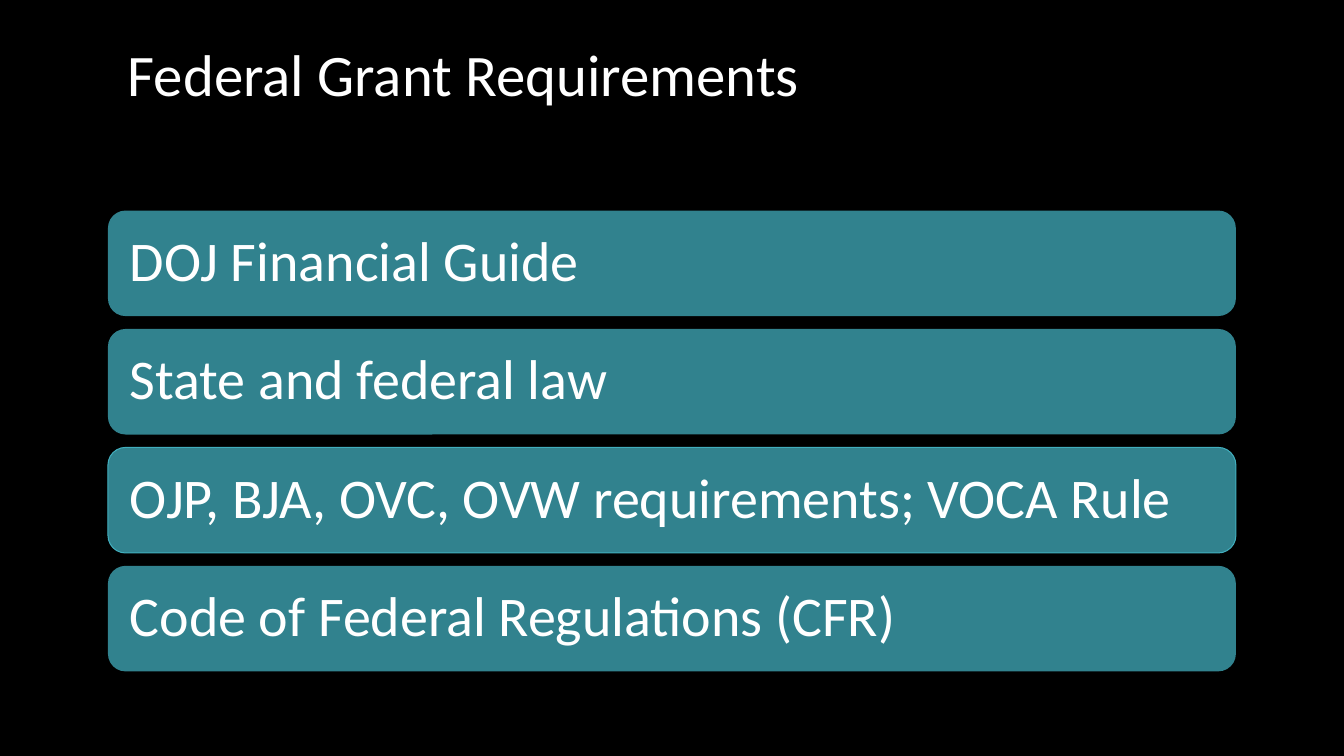
from pptx import Presentation
from pptx.dml.color import RGBColor
from pptx.enum.shapes import MSO_SHAPE
from pptx.enum.text import MSO_ANCHOR, PP_ALIGN
from pptx.util import Pt

ROUNDED = MSO_SHAPE.ROUNDED_RECTANGLE
TOP, MIDDLE = MSO_ANCHOR.TOP, MSO_ANCHOR.MIDDLE
LEFT = PP_ALIGN.LEFT

COLOURS = {
    "background": "000000",
    "bar": "31828E",
    "outline": "41AEBD",
    "text": "FFFFFF",
}
FONT = "Calibri"

REQUIREMENTS = [
    "DOJ Financial Guide",
    "State and federal law",
    "OJP, BJA, OVC, OVW requirements; VOCA Rule",
    "Code of Federal Regulations (CFR)",
]
OUTLINED_INDEX = 2
BAR_LEFT, BAR_TOP, BAR_WIDTH, BAR_HEIGHT = 77.1, 150.4, 805.7, 75.4
BAR_PITCH = 84.6


class SlideBuilder:
    def __init__(self, presentation):
        self.slide = presentation.slides.add_slide(presentation.slide_layouts[6])
        self.paint(self.slide.background.fill, "background")

    def paint(self, fill, colour):
        fill.solid()
        fill.fore_color.rgb = RGBColor.from_string(COLOURS[colour])

    def add_line_of_text(self, shape, text, size, anchor):
        frame = shape.text_frame
        frame.word_wrap = True
        frame.vertical_anchor = anchor
        paragraph = frame.paragraphs[0]
        paragraph.alignment = LEFT
        paragraph.line_spacing = 0.9
        run = paragraph.add_run()
        run.text = text
        run.font.name = FONT
        run.font.size = Pt(size)
        run.font.color.rgb = RGBColor.from_string(COLOURS["text"])
        return frame

    def title(self, text, left, top, width, height):
        shape = self.slide.shapes.add_textbox(Pt(left), Pt(top), Pt(width), Pt(height))
        frame = self.add_line_of_text(shape, text, 42, TOP)
        properties = frame.paragraphs[0]._p.get_or_add_pPr()
        properties.set("marL", str(Pt(36)))
        properties.set("indent", str(Pt(-18)))

    def bar(self, text, top, outlined):
        shape = self.slide.shapes.add_shape(
            ROUNDED, Pt(BAR_LEFT), Pt(top), Pt(BAR_WIDTH), Pt(BAR_HEIGHT))
        shape.shadow.inherit = False
        self.paint(shape.fill, "bar")
        if outlined:
            self.paint(shape.line.fill, "outline")
            shape.line.width = Pt(0.75)
        else:
            shape.line.fill.background()
        frame = self.add_line_of_text(shape, text, 40, MIDDLE)
        frame.margin_left = frame.margin_right = Pt(12)


def main():
    presentation = Presentation()
    presentation.slide_width = Pt(960)
    presentation.slide_height = Pt(540)
    builder = SlideBuilder(presentation)
    builder.title("Federal Grant Requirements", 66.2, 28.8, 828, 104.4)
    for index, requirement in enumerate(REQUIREMENTS):
        builder.bar(requirement, BAR_TOP + index * BAR_PITCH, index == OUTLINED_INDEX)
    presentation.save("out.pptx")


if __name__ == "__main__":
    main()
